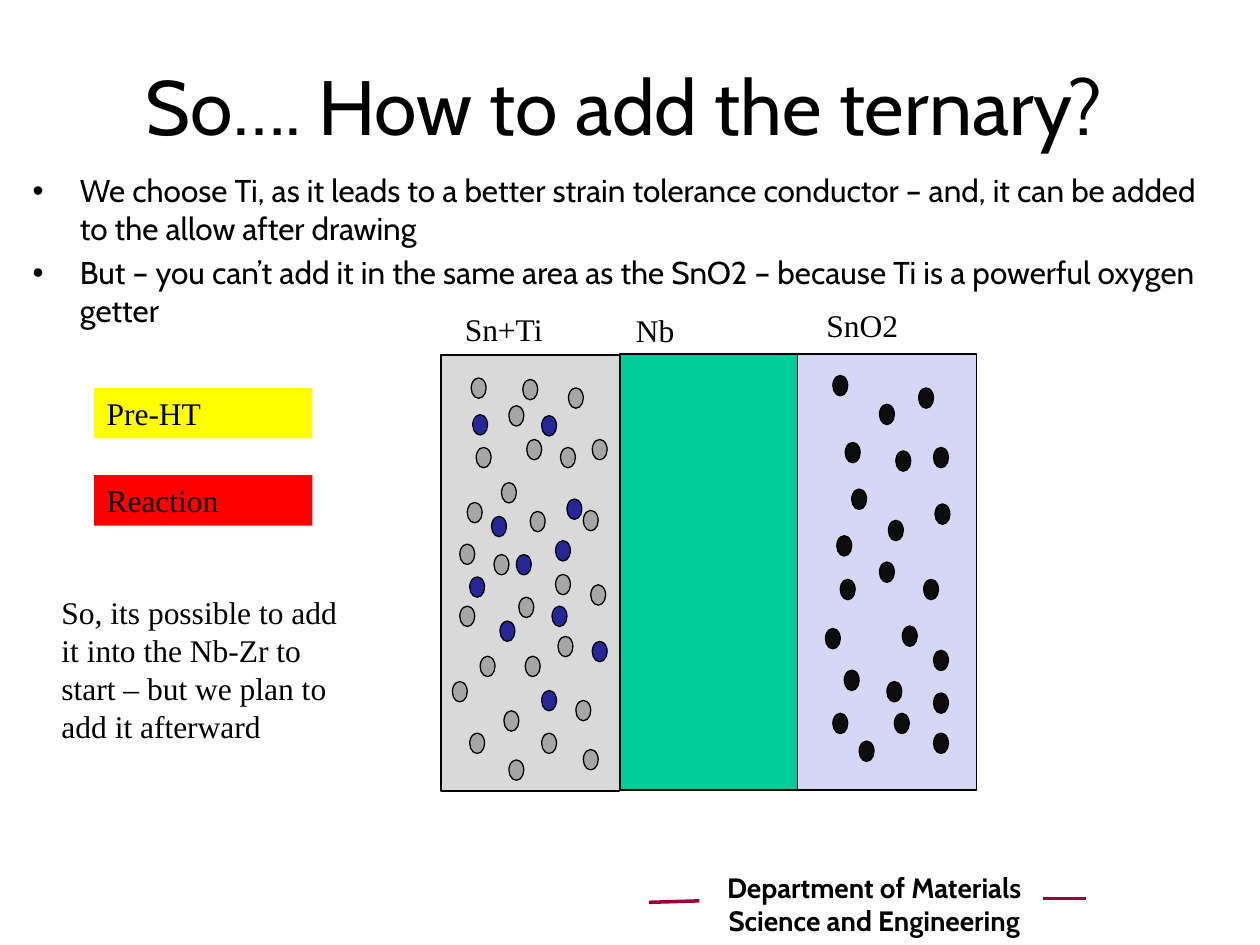
from lxml.etree import SubElement
from pptx import Presentation
from pptx.dml.color import RGBColor
from pptx.enum.shapes import MSO_CONNECTOR, MSO_SHAPE
from pptx.enum.text import MSO_ANCHOR, PP_ALIGN
from pptx.oxml.ns import qn
from pptx.util import Cm, Pt

BLACK = RGBColor(0x00, 0x00, 0x00)
GREEN = RGBColor(0x00, 0xCC, 0x99)
SILVER = RGBColor(0xD9, 0xD9, 0xD9)
LILAC = RGBColor(0xD6, 0xD6, 0xF5)
GREY = RGBColor(0xA6, 0xA6, 0xA6)
BLUE = RGBColor(0x26, 0x26, 0x99)
COAL = RGBColor(0x0D, 0x0D, 0x0D)
YELLOW = RGBColor(0xFF, 0xFF, 0x00)
RED = RGBColor(0xFF, 0x00, 0x00)
WINE = RGBColor(0x99, 0x00, 0x33)

SANS = "Cabin"
SERIF = "Times New Roman"

POINTS = [
    "We choose Ti, as it leads to a better strain tolerance conductor – and, "
    "it can be added to the allow after drawing",
    "But – you can’t add it in the same area as the SnO2 – because Ti is a "
    "powerful oxygen getter",
]
NOTE = ("So, its possible to add it into the Nb-Zr to start – but we plan to "
        "add it afterward")

ZONES = [
    (12.5, 7.14, GREEN),
    (8.89, 7.16, SILVER),
    (16.08, 7.14, LILAC),
]
LABELS = [
    ("Sn+Ti", 9.12, 6.12),
    ("SnO2", 16.41, 6.05),
    ("Nb", 12.57, 6.15),
]
KEYS = [("Pre-HT", 7.82, YELLOW), ("Reaction", 9.58, RED)]
DASHES = [(21.03, 18.11, 21.89, 18.11), (13.08, 18.19, 14.1, 18.16)]

TIN = [
    (11.3, 9.02), (10.69, 10.31), (11.2, 11.58), (10.46, 12.04),
    (10.62, 8.86), (11.25, 12.83), (10.59, 13.23), (11.61, 14.12),
    (10.16, 14.33), (9.5, 7.62), (10.54, 7.65), (9.6, 9.02),
    (11.46, 7.82), (9.42, 10.13), (9.96, 11.18), (9.27, 12.22),
    (9.68, 13.23), (9.47, 14.78), (10.92, 14.78), (10.26, 15.32),
    (11.76, 10.29), (9.27, 10.97), (10.26, 8.18), (11.76, 15.11),
    (11.91, 11.79), (10.11, 9.73), (11.94, 8.86), (9.12, 13.74),
]
TITAN = [
    (10.92, 8.38), (11.43, 10.06), (10.41, 11.18), (10.08, 12.52),
    (10.92, 13.92), (11.94, 12.93), (9.91, 10.41), (9.53, 8.36),
    (9.47, 11.63), (11.2, 10.9), (11.13, 12.22),
]
OXIDE = [
    (16.79, 7.57), (17.73, 8.15), (17.04, 8.92), (18.06, 9.09),
    (17.17, 9.86), (16.87, 10.8), (17.91, 10.49), (16.94, 11.68),
    (17.73, 11.33), (16.64, 12.67), (18.19, 12.62), (17.02, 13.51),
    (18.52, 7.82), (18.82, 9.02), (18.85, 10.16), (18.62, 11.68),
    (16.79, 14.38), (17.88, 13.74), (18.82, 13.11), (17.32, 14.94),
    (18.82, 13.97), (18.03, 14.38), (18.82, 14.78),
]


def style(para, size, face, bold=False, align=PP_ALIGN.LEFT):
    """Set the font and alignment of a paragraph."""
    para.alignment = align
    font = para.font
    font.size, font.name, font.bold = Pt(size), face, bold
    font.color.rgb = BLACK


def add_title(slide, text):
    """Move, fill and format the title placeholder."""
    title = slide.shapes.title
    title.left, title.top = Cm(1.8), Cm(0.53)
    title.width, title.height = Cm(21.59), Cm(3.18)
    frame = title.text_frame
    frame.text = text
    frame.vertical_anchor = MSO_ANCHOR.MIDDLE
    style(frame.paragraphs[0], 44, SANS, align=PP_ALIGN.CENTER)


def add_text(slide, text, x, y, w, h, size=18, face=SERIF, **look):
    """Add a wrapping text box with one paragraph."""
    frame = slide.shapes.add_textbox(Cm(x), Cm(y), Cm(w), Cm(h)).text_frame
    frame.word_wrap = True
    frame.text = text
    style(frame.paragraphs[0], size, face, **look)


def add_list(slide, items, x, y, w, h):
    """Add a bulleted list."""
    frame = slide.shapes.add_textbox(Cm(x), Cm(y), Cm(w), Cm(h)).text_frame
    frame.word_wrap = True
    for i, item in enumerate(items):
        para = frame.add_paragraph() if i else frame.paragraphs[0]
        para.text = item
        para.space_before = Pt(3.6 if i else 0)
        props = para._p.get_or_add_pPr()
        props.set("marL", str(Cm(0.95)))
        props.set("indent", str(Cm(-0.95)))
        SubElement(props, qn("a:buFont"), typeface="Arial")
        SubElement(props, qn("a:buChar"), char="•")
        style(para, 18, SANS)


def add_block(slide, kind, x, y, w, h, fill, edge=True):
    """Add a filled shape, outlined in black on request."""
    block = slide.shapes.add_shape(kind, Cm(x), Cm(y), Cm(w), Cm(h))
    block.shadow.inherit = False
    block.fill.solid()
    block.fill.fore_color.rgb = fill
    if edge:
        block.line.color.rgb = BLACK
        block.line.width = Pt(0.75)
    else:
        block.line.fill.background()
    return block


def add_dots(slide, spots, fill):
    """Add one small round grain at each spot."""
    for x, y in spots:
        add_block(slide, MSO_SHAPE.FLOWCHART_CONNECTOR, x, y, 0.3, 0.41, fill)


def add_key(slide, text, y, fill):
    """Add a coloured step label."""
    key = add_block(slide, MSO_SHAPE.RECTANGLE, 1.9, y, 4.4, 1.02, fill, False)
    frame = key.text_frame
    frame.text = text
    frame.vertical_anchor = MSO_ANCHOR.TOP
    style(frame.paragraphs[0], 18, SERIF)


def add_dash(slide, *ends):
    """Add a short footer line."""
    dash = slide.shapes.add_connector(MSO_CONNECTOR.STRAIGHT, *map(Cm, ends))
    dash.line.color.rgb = WINE
    dash.line.width = Pt(2)
    SubElement(dash._element.spPr, qn("a:effectLst"))


def main():
    """Build and save the slide."""
    deck = Presentation()
    deck.slide_width, deck.slide_height = Cm(25.4), Cm(19.05)
    slide = deck.slides.add_slide(deck.slide_layouts[5])
    add_text(slide, "Department of Materials Science and Engineering",
             13.84, 17.42, 7.57, 1.63, 16, SANS,
             bold=True, align=PP_ALIGN.CENTER)
    for dash in DASHES:
        add_dash(slide, *dash)
    add_title(slide, "So…. How to add the ternary?")
    add_list(slide, POINTS, 0.41, 3.33, 24.2, 2.31)
    for x, y, fill in ZONES:
        add_block(slide, MSO_SHAPE.RECTANGLE, x, y, 3.6, 8.79, fill)
    for spots, fill in ((TIN, GREY), (TITAN, BLUE), (OXIDE, COAL)):
        add_dots(slide, spots, fill)
    for text, x, y in LABELS:
        add_text(slide, text, x, y, 2.95, 1.02)
    for key in KEYS:
        add_key(slide, *key)
    add_text(slide, NOTE, 0.99, 11.84, 6.4, 3.33)
    deck.save("out.pptx")


if __name__ == "__main__":
    main()
